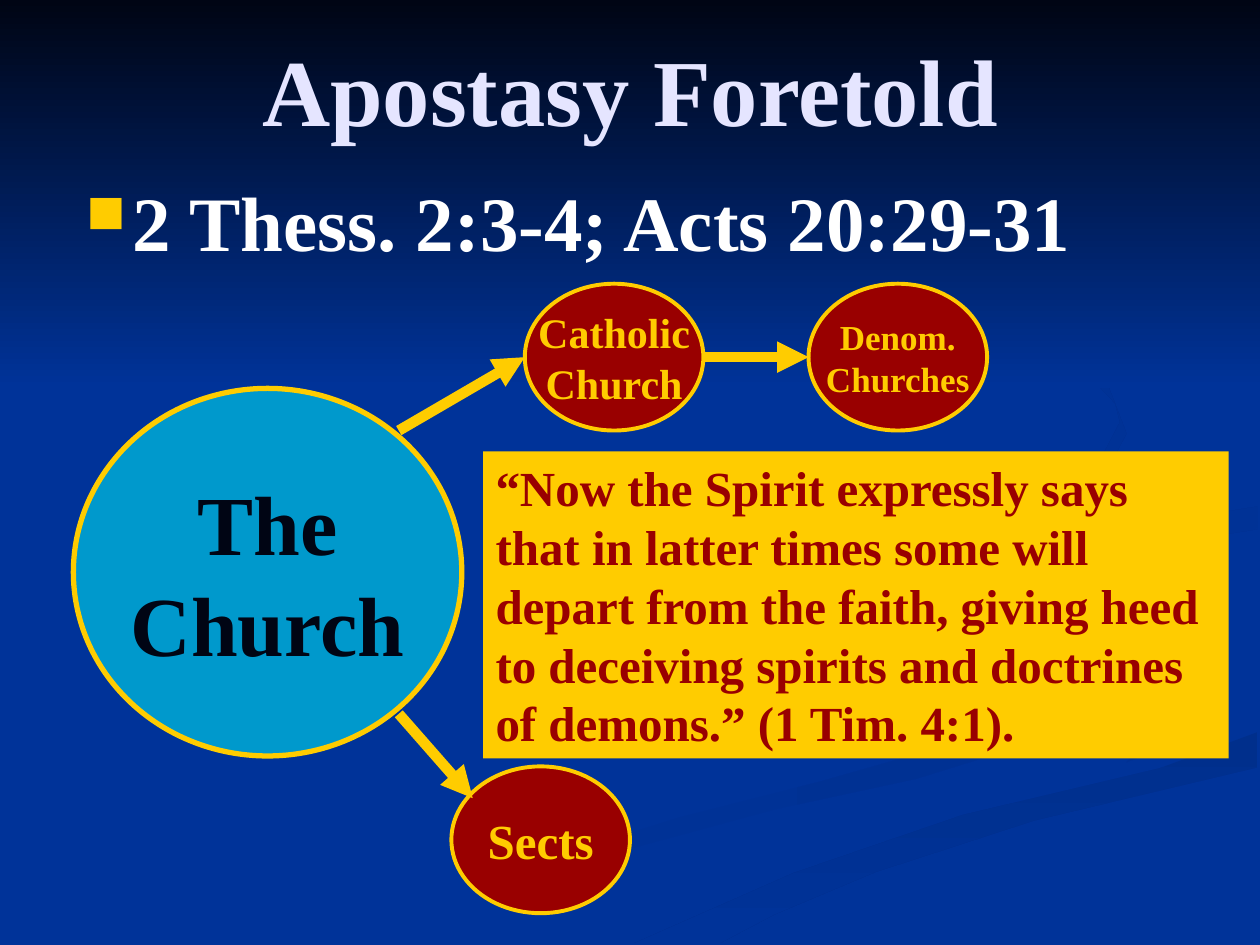
"""Builds the "Apostasy Foretold" slide."""
import lxml.etree
import pptx
import pptx.dml.color
import pptx.enum.shapes
import pptx.enum.text
import pptx.oxml.ns
import pptx.util

Cm = pptx.util.Cm
qn = pptx.oxml.ns.qn
ALIGN = pptx.enum.text.PP_ALIGN
ANCHOR = pptx.enum.text.MSO_ANCHOR
SHAPE = pptx.enum.shapes.MSO_SHAPE

NAVY, NIGHT, GOLD, MAROON = "003399", "000514", "FFCC00", "990000"

SWOOSHES = [
    ("003399", "003193", 0, [
        (7.62, 19.02), (10.44, 17.5), (13.69, 16.48), (16.56, 15.75),
        (19.05, 15.04), (19.89, 14.58), (19.84, 14.05), (20.27, 14.5),
        (20.29, 14.86), (19.76, 15.3), (18.47, 15.7), (15.65, 16.31),
        (12.67, 17.12), (9.17, 19.02)]),
    ("003399", "003193", 45, [
        (23.95, 14.48), (23.34, 13.89), (20.1, 12.93), (18.39, 11.79),
        (18.62, 12.29), (20.24, 13.31), (22.66, 14.05), (23.3, 14.71),
        (22.71, 15.37), (23.8, 14.9)]),
    ("002F8C", "003399", 90, [
        (12.78, 19.02), (14.5, 19.02), (15.6, 18.44), (17.65, 17.58),
        (20.85, 16.54), (25.35, 15.47), (25.35, 14.76), (23.37, 15.49),
        (19.41, 16.43), (16, 17.6)]),
    ("003091", "003399", 45, [
        (19.84, 11.68), (20.12, 12.14), (20.98, 12.6), (20.45, 12.09),
        (20.73, 11.66), (22.3, 11.15), (25.35, 10.67), (25.35, 10.21),
        (21.97, 10.77), (20.29, 11.23)]),
    ("002F8E", "003399", 45, [
        (17.35, 10.92), (20.5, 10.34), (22.25, 9.6), (22.71, 8.74),
        (22.35, 7.8), (21.41, 6.99), (19.35, 5.92), (21.49, 7.09),
        (22.48, 8.13), (22.58, 8.51), (22.25, 9.14), (21.39, 9.6),
        (17.17, 10.52), (15.37, 10.99), (14.66, 11.73), (15.8, 12.7),
        (15.06, 11.94), (15.57, 11.38)]),
    (NIGHT, NAVY, 90, [(0, 0), (0, 7.82), (25.4, 7.82), (25.4, 0)]),
]


def rgb(colour):
    return pptx.dml.color.RGBColor.from_string(colour)


def paint(fill, colour):
    fill.solid()
    fill.fore_color.rgb = rgb(colour)


def add_swoosh(slide, start, end, angle, outline):
    corners = [(Cm(x), Cm(y)) for x, y in outline]
    builder = slide.shapes.build_freeform(*corners[0])
    builder.add_line_segments(corners[1:], close=True)
    swoosh = builder.convert_to_shape()
    swoosh.shadow.inherit = False
    swoosh.line.fill.background()
    swoosh.fill.gradient()
    swoosh.fill.gradient_angle = (360 - angle) % 360
    for stop, colour in zip(swoosh.fill.gradient_stops, (start, end)):
        stop.color.rgb = rgb(colour)


def write(frame, text, size, colour, align=ALIGN.LEFT):
    frame.text = text
    for paragraph in frame.paragraphs:
        paragraph.alignment = align
        font = paragraph.font
        font.name, font.size, font.bold = "Times New Roman", pptx.util.Pt(size), True
        font.color.rgb = rgb(colour)


def add_text(slide, box, text, size, colour, align=ALIGN.LEFT, anchor=ANCHOR.TOP):
    textbox = slide.shapes.add_textbox(*map(Cm, box))
    textbox.text_frame.word_wrap = True
    textbox.text_frame.vertical_anchor = anchor
    write(textbox.text_frame, text, size, colour, align)
    return textbox


def add_bullet(paragraph, colour):
    props = paragraph._p.get_or_add_pPr()
    props.set("marL", str(Cm(0.95)))
    props.set("indent", str(-Cm(0.95)))
    tint = lxml.etree.SubElement(props, qn("a:buClr"))
    lxml.etree.SubElement(tint, qn("a:srgbClr"), val=colour)
    lxml.etree.SubElement(props, qn("a:buSzPct"), val="70000")
    lxml.etree.SubElement(props, qn("a:buChar"), char="■")


def add_circle(slide, left, top, label, size, width=3.6, height=2.96,
               fill=MAROON, colour=GOLD, outline=2.25):
    circle = slide.shapes.add_shape(
        SHAPE.OVAL, Cm(left), Cm(top), Cm(width), Cm(height))
    circle.shadow.inherit = False
    paint(circle.fill, fill)
    circle.line.color.rgb = rgb(GOLD)
    circle.line.width = pptx.util.Pt(outline)
    circle.text_frame.word_wrap = False
    circle.text_frame.vertical_anchor = ANCHOR.MIDDLE
    write(circle.text_frame, label, size, colour, ALIGN.CENTER)


def add_arrow(slide, *ends):
    arrow = slide.shapes.add_connector(
        pptx.enum.shapes.MSO_CONNECTOR.STRAIGHT, *map(Cm, ends))
    arrow.line.color.rgb = rgb(GOLD)
    arrow.line.width = pptx.util.Pt(6)
    lxml.etree.SubElement(arrow.line._get_or_add_ln(), qn("a:tailEnd"), type="triangle")
    lxml.etree.SubElement(arrow._element.spPr, qn("a:effectLst"))


def main():
    deck = pptx.Presentation()
    deck.slide_width, deck.slide_height = Cm(25.4), Cm(19.05)
    slide = deck.slides.add_slide(deck.slide_layouts[6])
    paint(slide.background.fill, NAVY)
    for swoosh in SWOOSHES:
        add_swoosh(slide, *swoosh)

    add_text(slide, (1.27, 0.42, 22.86, 2.75), "Apostasy Foretold", 54, "E5E5FF",
             ALIGN.CENTER, ANCHOR.MIDDLE)
    passages = add_text(slide, (1.48, 3.39, 22.86, 2.54),
                        "2 Thess. 2:3-4; Acts 20:29-31", 44, "FFFFFF")
    add_bullet(passages.text_frame.paragraphs[0], GOLD)

    add_circle(slide, 1.48, 7.83, "The\nChurch", 48, 7.83, 7.41, "0099CC", NIGHT, 3)
    add_circle(slide, 10.58, 5.72, "Catholic\nChurch", 24)
    add_circle(slide, 16.3, 5.72, "Denom.\nChurches", 20)
    add_arrow(slide, 8.04, 8.68, 10.58, 7.2)
    add_arrow(slide, 14.18, 7.2, 16.3, 7.2)
    add_circle(slide, 9.1, 15.45, "Sects", 28)
    add_arrow(slide, 8.04, 14.39, 9.53, 16.09)

    quote = add_text(
        slide, (9.74, 9.1, 15.03, 6.19),
        "“Now the Spirit expressly says that in latter times some will depart from "
        "the faith, giving heed to deceiving spirits and doctrines of demons.” "
        "(1 Tim. 4:1).", 28, MAROON)
    paint(quote.fill, GOLD)

    deck.save("out.pptx")


if __name__ == "__main__":
    main()
